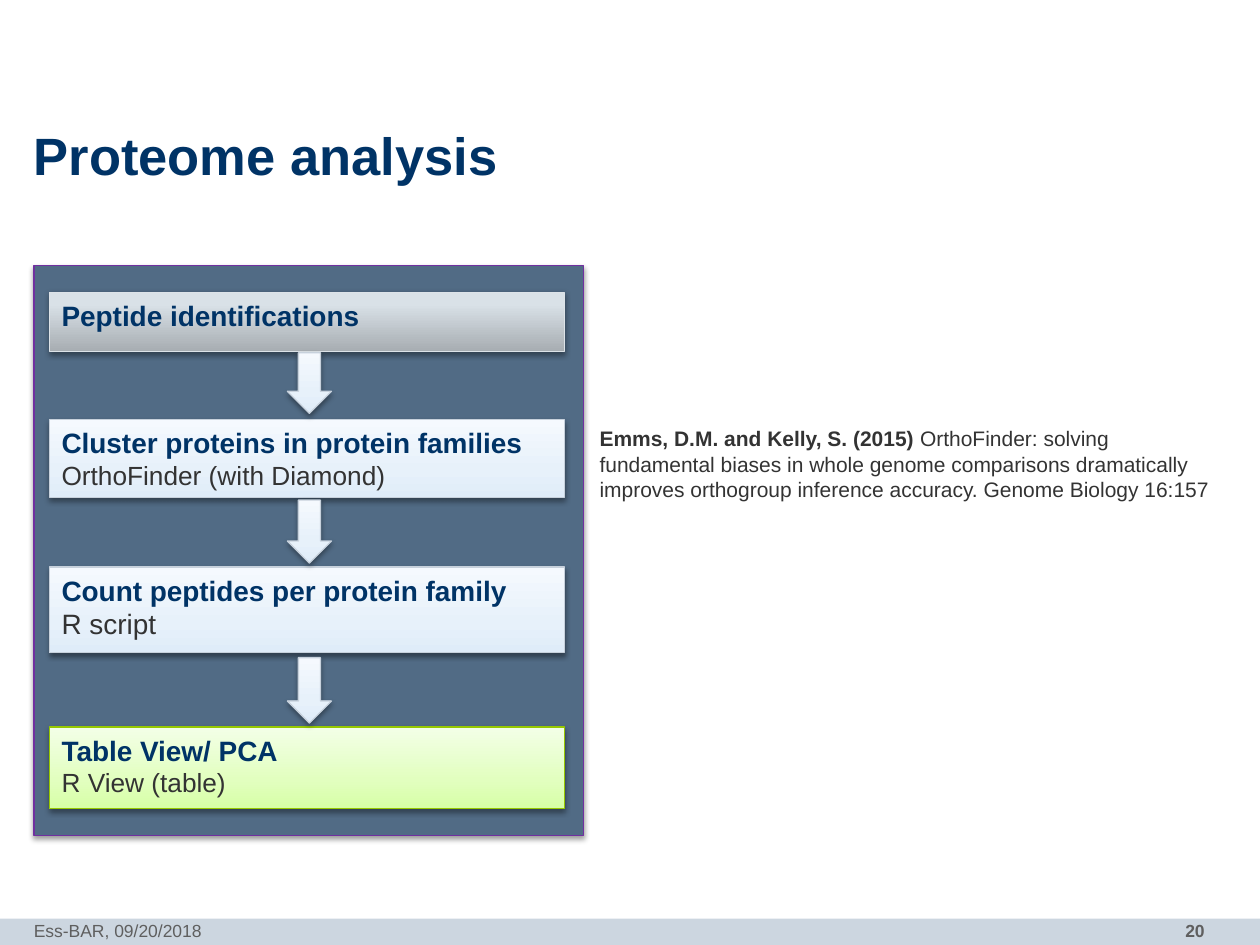
from lxml.etree import SubElement
from pptx import Presentation
from pptx.dml.color import RGBColor
from pptx.enum.shapes import MSO_SHAPE
from pptx.enum.text import MSO_ANCHOR, PP_ALIGN
from pptx.oxml.ns import qn
from pptx.util import Pt

NAVY, TEXT, GREY = "003366", "333333", "5F5F5F"
BLUE_STYLE = ([(0, "DFECF9"), (35, "E7F1FA"), (100, "F5F9FE")], "C7D1DC")
GREEN_STYLE = ([(0, "D6FFA5"), (35, "E2FFBF"), (100, "F3FFE7")], "96C800")
GREY_STYLE = ([(0, "A7ADB2"), (80, "D9E1E7"), (100, "DAE2E9")], "DDE3E8")
STEPS = [
    (15.1, 33.8, GREY_STYLE, "Peptide identifications", None, 0),
    (87.8, 44.6, BLUE_STYLE, "Cluster proteins in protein families",
     "OrthoFinder (with Diamond)", 15),
    (172.1, 49, BLUE_STYLE, "Count peptides per protein family", "R script", 16),
    (263.5, 46.8, GREEN_STYLE, "Table View/ PCA", "R View (table)", 15),
]
ARROWS = [(49.7, 34.6), (133.9, 36), (223.9, 37.4)]


def color(code):
    """Turn a hex string into a colour."""
    return RGBColor.from_string(code)


def set_font(font, size, code, bold=False):
    """Set the font of a paragraph or run."""
    font.name, font.size, font.bold = "Arial", Pt(size), bold
    font.color.rgb = color(code)


def add_color(parent, code):
    """Append a hex colour element to an XML parent."""
    return SubElement(parent, qn("a:srgbClr"), val=code)


def fill_gradient(shape, stops):
    """Fill a shape with a gradient that rises from its bottom edge."""
    shape.fill.gradient()
    shape.fill.gradient_angle = 90
    stop_list = shape._element.spPr.find(".//" + qn("a:gsLst"))
    for stop in list(stop_list):
        stop_list.remove(stop)
    for percent, code in stops:
        add_color(SubElement(stop_list, qn("a:gs"), pos=str(percent * 1000)), code)


def add_shadow(shape, opacity=38):
    """Give a shape a soft shadow straight below it."""
    shape.shadow.inherit = False
    effects = shape._element.spPr.find(qn("a:effectLst"))
    shadow = SubElement(effects, qn("a:outerShdw"), blurRad=str(Pt(3.1)),
                        dist=str(Pt(1.6)), dir="5400000", rotWithShape="0")
    SubElement(add_color(shadow, "000000"), qn("a:alpha"), val=str(opacity * 1000))


def add_block(page, kind, left, top, width, height, fill, line=None):
    """Add a shape with a solid or gradient fill, shadowed if outlined."""
    shape = page.shapes.add_shape(kind, Pt(left), Pt(top), Pt(width), Pt(height))
    if isinstance(fill, str):
        shape.fill.solid()
        shape.fill.fore_color.rgb = color(fill)
    else:
        fill_gradient(shape, fill)
    if line:
        shape.line.color.rgb = color(line)
        shape.line.width = Pt(0.75)
        add_shadow(shape)
    else:
        shape.line.fill.background()
        shape.shadow.inherit = False
    return shape


def add_text(page, left, top, width, height, text, size, code, bold=False, inset=0):
    """Add a wrapping one-paragraph text box and return its frame."""
    box = page.shapes.add_textbox(Pt(left), Pt(top), Pt(width), Pt(height))
    frame = box.text_frame
    frame.word_wrap = True
    frame.margin_left = frame.margin_right = Pt(inset)
    para = frame.paragraphs[0]
    para.text = text
    set_font(para.font, size, code, bold)
    return frame


def add_title(page, left, top, width, height):
    """Place the slide title."""
    frame = add_text(page, left, top, width, height, "Proteome analysis", 30, NAVY, True)
    frame.margin_top = frame.margin_bottom = 0
    frame.vertical_anchor = MSO_ANCHOR.MIDDLE
    frame.paragraphs[0].line_spacing = 0.85


def add_footer(page, left, top, width, height):
    """Place the footer band with the event and the page number."""
    add_block(page, MSO_SHAPE.RECTANGLE, left, top, width, height, "CCD6E0")
    add_text(page, left + 19.4, top - 2.9, 470.9, 18, "Ess-BAR, 09/20/2018", 10, GREY)
    number = add_text(page, left + 599, top - 2.9, 96.5, 18.7, "20", 10, GREY, True, 7.2)
    number.paragraphs[0].alignment = PP_ALIGN.RIGHT


def add_step(page, left, top, width, height, style, heading, detail, detail_size):
    """Place one workflow step with its heading and tool."""
    shape = add_block(page, MSO_SHAPE.RECTANGLE, left, top, width, height, *style)
    frame = shape.text_frame
    frame.word_wrap = False
    frame.vertical_anchor = MSO_ANCHOR.TOP
    para = frame.paragraphs[0]
    para.text = heading
    para.alignment = PP_ALIGN.LEFT
    set_font(para.font, 16, NAVY, True)
    if detail:
        para = frame.add_paragraph()
        para.text = detail
        para.alignment = PP_ALIGN.LEFT
        set_font(para.font, detail_size, TEXT)


def add_workflow(page, left, top, width, height):
    """Place the panel with its steps and the arrows between them."""
    add_block(page, MSO_SHAPE.RECTANGLE, left, top, width, height, "516B85", "7030A0")
    for offset, step_height, *content in STEPS:
        add_step(page, left + 8.7, top + offset, 294.5, step_height, *content)
    for offset, arrow_height in ARROWS:
        add_block(page, MSO_SHAPE.DOWN_ARROW, left + 144.8, top + offset,
                  25.2, arrow_height, *BLUE_STYLE)


def add_reference(page, left, top, width, height):
    """Place the literature reference."""
    frame = add_text(page, left, top, width, height, "", 12, TEXT, inset=7.2)
    para = frame.paragraphs[0]
    for text, bold in [
        ("Emms, D.M. and Kelly, S. (2015) ", True),
        ("OrthoFinder: solving fundamental biases in whole genome comparisons "
         "dramatically improves orthogroup inference accuracy. "
         "Genome Biology 16:157", False),
    ]:
        span = para.add_run()
        span.text = text
        set_font(span.font, 12, TEXT, bold)


def main():
    """Build and save the slide."""
    deck = Presentation()
    deck.slide_width, deck.slide_height = Pt(720), Pt(540)
    page = deck.slides.add_slide(deck.slide_layouts[6])
    add_footer(page, 0, 524.9, 720, 15.1)
    add_title(page, 19.4, 74.2, 680.4, 33.8)
    add_workflow(page, 19.4, 151.9, 313.9, 325.4)
    add_reference(page, 335.5, 239.8, 368.6, 51.1)
    deck.save("out.pptx")


if __name__ == "__main__":
    main()
